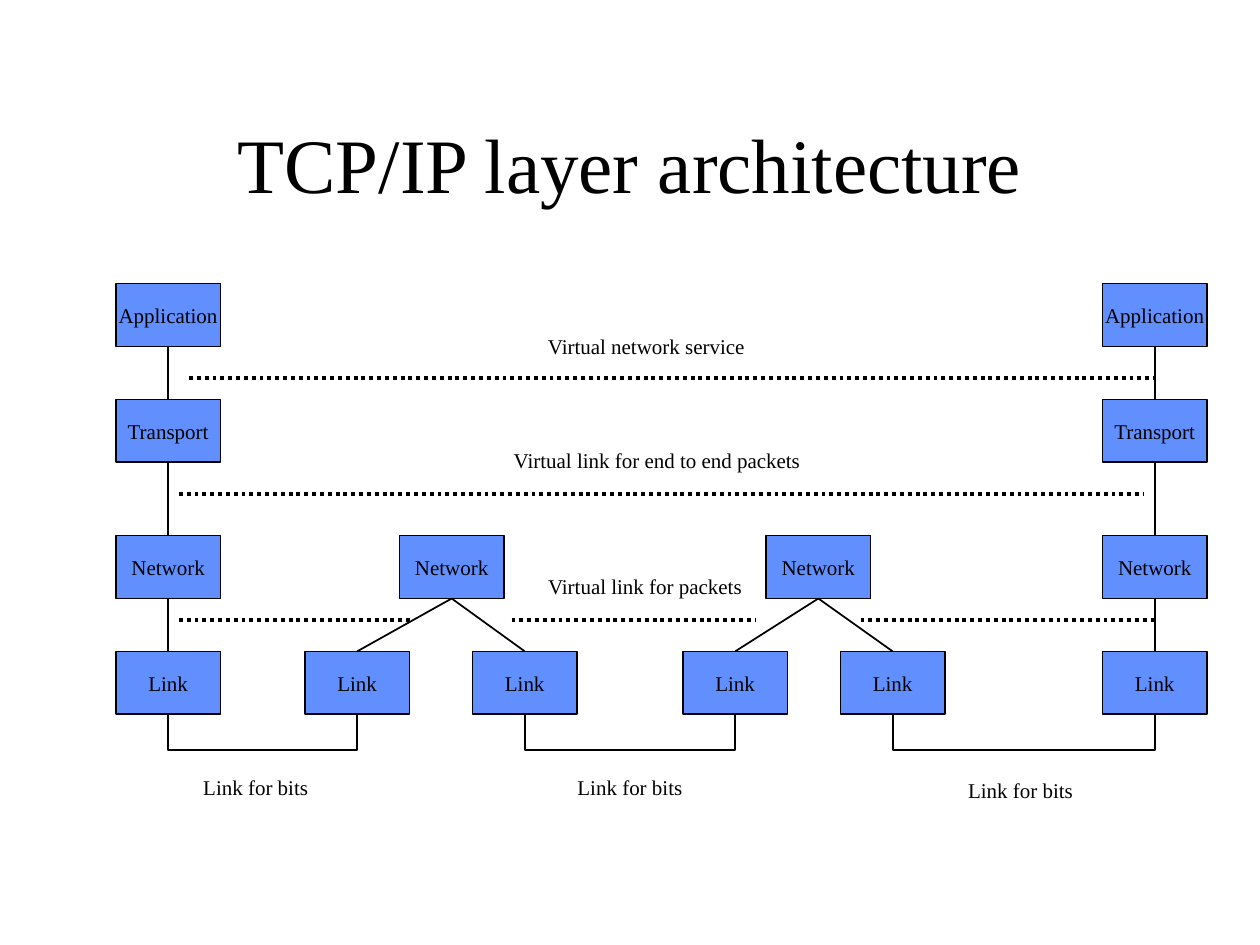
"""Build a slide of the TCP/IP layers and the links between them."""
from lxml import etree
from pptx import Presentation
from pptx.dml.color import RGBColor
from pptx.enum.dml import MSO_LINE
from pptx.enum.shapes import MSO_CONNECTOR, MSO_SHAPE
from pptx.enum.text import MSO_ANCHOR, MSO_AUTO_SIZE, PP_ALIGN
from pptx.oxml.ns import qn
from pptx.util import Inches, Pt

BLACK = RGBColor(0x00, 0x00, 0x00)
BLUE = RGBColor(0x61, 0x8F, 0xFD)
FONT = "Times New Roman"
RECT = MSO_SHAPE.RECTANGLE
LINE, BENT = MSO_CONNECTOR.STRAIGHT, MSO_CONNECTOR.ELBOW
DOTS = MSO_LINE.ROUND_DOT
CENTER = PP_ALIGN.CENTER
MIDDLE, TOP = MSO_ANCHOR.MIDDLE, MSO_ANCHOR.TOP
FIXED = MSO_AUTO_SIZE.NONE
TOP_SIDE, LOW_SIDE = 0, 2

WIDE, HIGH = 0.83, 0.5
ENDS = [0.92, 8.75]
LAYERS = [
    ("Application", 2.25, ENDS),
    ("Transport", 3.17, ENDS),
    ("Network", 4.25, [0.92, 3.17, 6.08, 8.75]),
    ("Link", 5.17, [0.92, 2.42, 3.75, 5.42, 6.67, 8.75]),
]
HOSTS = [0, 1, 1, 2, 2, 3]
DOTTED = [
    (1.5, 9.17, 3),
    (1.42, 9.08, 3.92),
    (1.42, 3.25, 4.92),
    (4.06, 6, 4.92),
    (6.83, 9.17, 4.92),
]
LABELS = [
    ("Virtual network service", 4.24, 2.6, 1.78),
    ("Virtual link for end to end packets", 3.97, 3.5, 2.49),
    ("Virtual link for packets", 4.24, 4.5, 1.76),
    ("Link for bits", 1.51, 6.1, 1.04),
    ("Link for bits", 4.48, 6.1, 1.04),
    ("Link for bits", 7.58, 6.12, 1.04),
]
DROP, THIN = Inches(0.25), Pt(0.1)
FULL = 100000
TURN = 270 * 60000


def write(shape, text, size=12, anchor=MIDDLE, wrap=False):
    frame = shape.text_frame
    frame.auto_size = FIXED
    frame.word_wrap = wrap
    frame.vertical_anchor = anchor
    para = frame.paragraphs[0]
    para.alignment = CENTER
    run = para.add_run()
    run.text = text
    run.font.size = Pt(size)
    run.font.name = FONT
    run.font.color.rgb = BLACK


def add_title(slide, text):
    title = slide.shapes.title
    title.left, title.top = Inches(0.75), Inches(0.67)
    title.width, title.height = Inches(8.5), Inches(1.25)
    write(title, text, size=44, wrap=True)


def add_box(slide, text, left, top):
    box = slide.shapes.add_shape(
        RECT, Inches(left), Inches(top), Inches(WIDE), Inches(HIGH))
    box.shadow.inherit = False
    box.fill.solid()
    box.fill.fore_color.rgb = BLUE
    box.line.color.rgb = BLACK
    box.line.width = Pt(1)
    write(box, text)
    return box


def add_label(slide, text, left, top, width):
    label = slide.shapes.add_textbox(
        Inches(left), Inches(top), Inches(width), Inches(0.3))
    write(label, text, anchor=TOP)


def add_line(slide, start=(0, 0), end=(0, 0), kind=LINE, width=1, dash=None):
    points = [Inches(value) for value in (*start, *end)]
    line = slide.shapes.add_connector(kind, *points)
    line.line.color.rgb = BLACK
    line.line.width = Pt(width)
    if dash:
        line.line.dash_style = dash
    etree.SubElement(line._element.spPr, qn("a:effectLst"))
    return line


def join(slide, low, high):
    line = add_line(slide)
    line.begin_connect(low, TOP_SIDE)
    line.end_connect(high, LOW_SIDE)


def add_loop(slide, first, last):
    line = add_line(slide, kind=BENT)
    line.begin_connect(first, LOW_SIDE)
    line.end_connect(last, LOW_SIDE)
    span = last.left - first.left
    line.left = first.left + (first.width + span - THIN) // 2
    line.top = first.top + first.height - span // 2
    line.width, line.height = THIN, span
    props = line._element.spPr
    frame = props.find(qn("a:xfrm"))
    frame.set("rot", str(TURN))
    frame.set("flipH", "1")
    guides = props.find(qn("a:prstGeom")).find(qn("a:avLst"))
    etree.SubElement(
        guides, qn("a:gd"), name="adj1", fmla=f"val {DROP * FULL // THIN}")


def main():
    deck = Presentation()
    deck.slide_width, deck.slide_height = Inches(10), Inches(7.5)
    slide = deck.slides.add_slide(deck.slide_layouts[5])
    add_title(slide, "TCP/IP layer architecture")
    rows = [[add_box(slide, name, left, top) for left in lefts]
            for name, top, lefts in LAYERS]
    apps, trans, nets, links = rows
    for high, low in ((apps, trans), (trans, nets)):
        for side in (0, -1):
            join(slide, low[side], high[side])
    for link, host in zip(links, HOSTS):
        join(slide, link, nets[host])
    for first, last in zip(links[::2], links[1::2]):
        add_loop(slide, first, last)
    for left, right, level in DOTTED:
        add_line(slide, (left, level), (right, level), width=2.25, dash=DOTS)
    for label in LABELS:
        add_label(slide, *label)
    deck.save("out.pptx")


if __name__ == "__main__":
    main()
